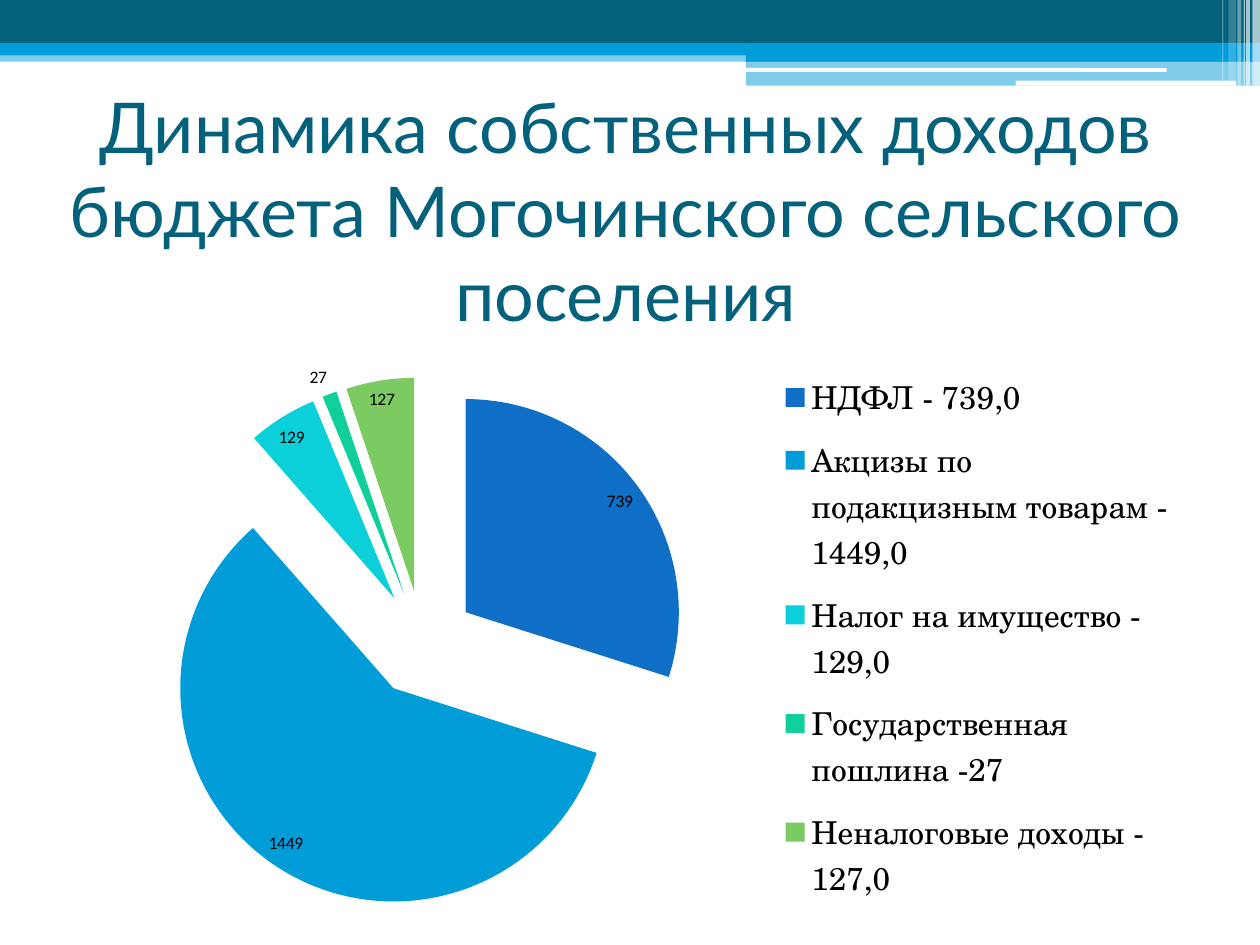
from dataclasses import dataclass

from lxml import etree
from pptx import Presentation
from pptx.chart.data import CategoryChartData
from pptx.dml.color import RGBColor
from pptx.enum.chart import XL_CHART_TYPE, XL_LABEL_POSITION, XL_LEGEND_POSITION
from pptx.enum.shapes import MSO_SHAPE
from pptx.enum.text import MSO_ANCHOR, PP_ALIGN
from pptx.oxml.ns import qn
from pptx.util import Inches, Pt

RECTANGLE = MSO_SHAPE.RECTANGLE
ROUNDED = MSO_SHAPE.ROUNDED_RECTANGLE
PIE = XL_CHART_TYPE.PIE
BEST_FIT = XL_LABEL_POSITION.BEST_FIT
LEGEND_RIGHT = XL_LEGEND_POSITION.RIGHT
MIDDLE = MSO_ANCHOR.MIDDLE
CENTER = PP_ALIGN.CENTER


@dataclass(frozen=True)
class Theme:
    dark: str = "04617B"
    accent: str = "009DD9"
    white: str = "FFFFFF"
    black: str = "000000"
    slices: tuple = ("0F6FC6", "009DD9", "0BD0D9", "10CF9B", "7CCA62")
    title_font: str = "Lato"
    legend_font: str = "TeX Gyre Schola"
    title_size: int = 40
    legend_size: int = 18
    label_size: int = 10


THEME = Theme()

# left, top, width, height, colour, opacity in percent
BANDS = [
    (0, 0.4, 10, 0.09, THEME.accent, 50),
    (0, 0, 10, 0.34, THEME.dark, 100),
    (0, 0.34, 10, 0.1, THEME.accent, 100),
    (5.92, 0.39, 4.08, 0.1, THEME.accent, 100),
    (5.92, 0.48, 4.08, 0.2, THEME.accent, 50),
]
WHITE_BARS = [(5.91, 0.54, 3.35, 0.03), (8.06, 0.64, 1.75, 0.04)]
# left, width, height, opacity in percent
STRIPES = [
    (9.94, 0.06, 0.68, 65),
    (9.89, 0.03, 0.68, 65),
    (9.87, 0.01, 0.68, 60),
    (9.82, 0.03, 0.68, 40),
    (9.75, 0.06, 0.64, 20),
    (9.7, 0.01, 0.64, 30),
]

TITLE = "Динамика собственных доходов бюджета Могочинского сельского поселения"
INCOME = {
    "НДФЛ - 739,0": 739,
    "Акцизы по подакцизным товарам - 1449,0": 1449,
    "Налог на имущество - 129,0": 129,
    "Государственная пошлина -27": 27,
    "Неналоговые доходы - 127,0": 127,
}
EXPLOSION = 25
PLOT_LAYOUT = (0.09, 0.07, 0.47, 0.9)
LEGEND_LAYOUT = (0.65, 0.04, 0.34, 0.94)


def rgb(color):
    return RGBColor.from_string(color)


def add_block(page, left, top, width, height, color, opacity=100, kind=RECTANGLE):
    block = page.shapes.add_shape(
        kind, Inches(left), Inches(top), Inches(width), Inches(height))
    block.shadow.inherit = False
    block.line.fill.background()
    block.fill.solid()
    block.fill.fore_color.rgb = rgb(color)
    if opacity < 100:
        fill_color = block.fill._xPr.find(".//" + qn("a:srgbClr"))
        etree.SubElement(fill_color, qn("a:alpha"), val=str(opacity * 1000))


def add_header(page):
    for band in BANDS:
        add_block(page, *band)
    for bar in WHITE_BARS:
        add_block(page, *bar, THEME.white, kind=ROUNDED)
    for left, width, height, opacity in STRIPES:
        add_block(page, left, 0, width, height, THEME.white, opacity)


def add_title(page):
    box = page.shapes.add_textbox(
        Inches(0.43), Inches(0.76), Inches(9.07), Inches(1.81))
    frame = box.text_frame
    frame.word_wrap = True
    frame.vertical_anchor = MIDDLE
    para = frame.paragraphs[0]
    para.text = TITLE
    para.alignment = CENTER
    para.font.name = THEME.title_font
    para.font.size = Pt(THEME.title_size)
    para.font.color.rgb = rgb(THEME.dark)


def set_layout(element, bounds, inner=False):
    """Place a chart part by fractions of the chart area: x, y, width, height."""
    for old in element.findall(qn("c:layout")):
        element.remove(old)
    layout = etree.Element(qn("c:layout"))
    manual = etree.SubElement(layout, qn("c:manualLayout"))
    if inner:
        etree.SubElement(manual, qn("c:layoutTarget"), val="inner")
    for mode in ("xMode", "yMode"):
        etree.SubElement(manual, qn("c:" + mode), val="edge")
    for side, value in zip("xywh", bounds):
        etree.SubElement(manual, qn("c:" + side), val=str(value))
    position = element.find(qn("c:legendPos"))
    if position is None:
        element.insert(0, layout)
    else:
        position.addnext(layout)


def add_legend(chart):
    chart.has_legend = True
    legend = chart.legend
    legend.position = LEGEND_RIGHT
    legend.include_in_layout = False
    legend.font.name = THEME.legend_font
    legend.font.size = Pt(THEME.legend_size)
    legend.font.color.rgb = rgb(THEME.black)
    set_layout(legend._element, LEGEND_LAYOUT)


def add_income_pie(page):
    data = CategoryChartData()
    data.categories = list(INCOME)
    data.add_series("Series 1", list(INCOME.values()))
    chart = page.shapes.add_chart(
        PIE, Inches(0.43), Inches(2.65), Inches(9), Inches(4.73), data).chart
    chart.has_title = False

    plot = chart.plots[0]
    plot.vary_by_categories = True
    plot.has_data_labels = True
    labels = plot.data_labels
    labels.show_value = True
    labels.show_percentage = False
    labels.position = BEST_FIT
    labels.font.size = Pt(THEME.label_size)
    labels.font.color.rgb = rgb(THEME.black)

    series = plot.series[0]
    explosion = etree.Element(qn("c:explosion"), val=str(EXPLOSION))
    series._element.find(qn("c:tx")).addnext(explosion)
    for index, color in enumerate(THEME.slices):
        fill = series.points[index].format.fill
        fill.solid()
        fill.fore_color.rgb = rgb(color)

    set_layout(chart._chartSpace.find(".//" + qn("c:plotArea")), PLOT_LAYOUT, inner=True)
    add_legend(chart)


def main():
    deck = Presentation()
    deck.slide_width = Inches(10)
    deck.slide_height = Inches(7.5)
    page = deck.slides.add_slide(deck.slide_layouts[6])
    add_header(page)
    add_title(page)
    add_income_pie(page)
    deck.save("out.pptx")


if __name__ == "__main__":
    main()
